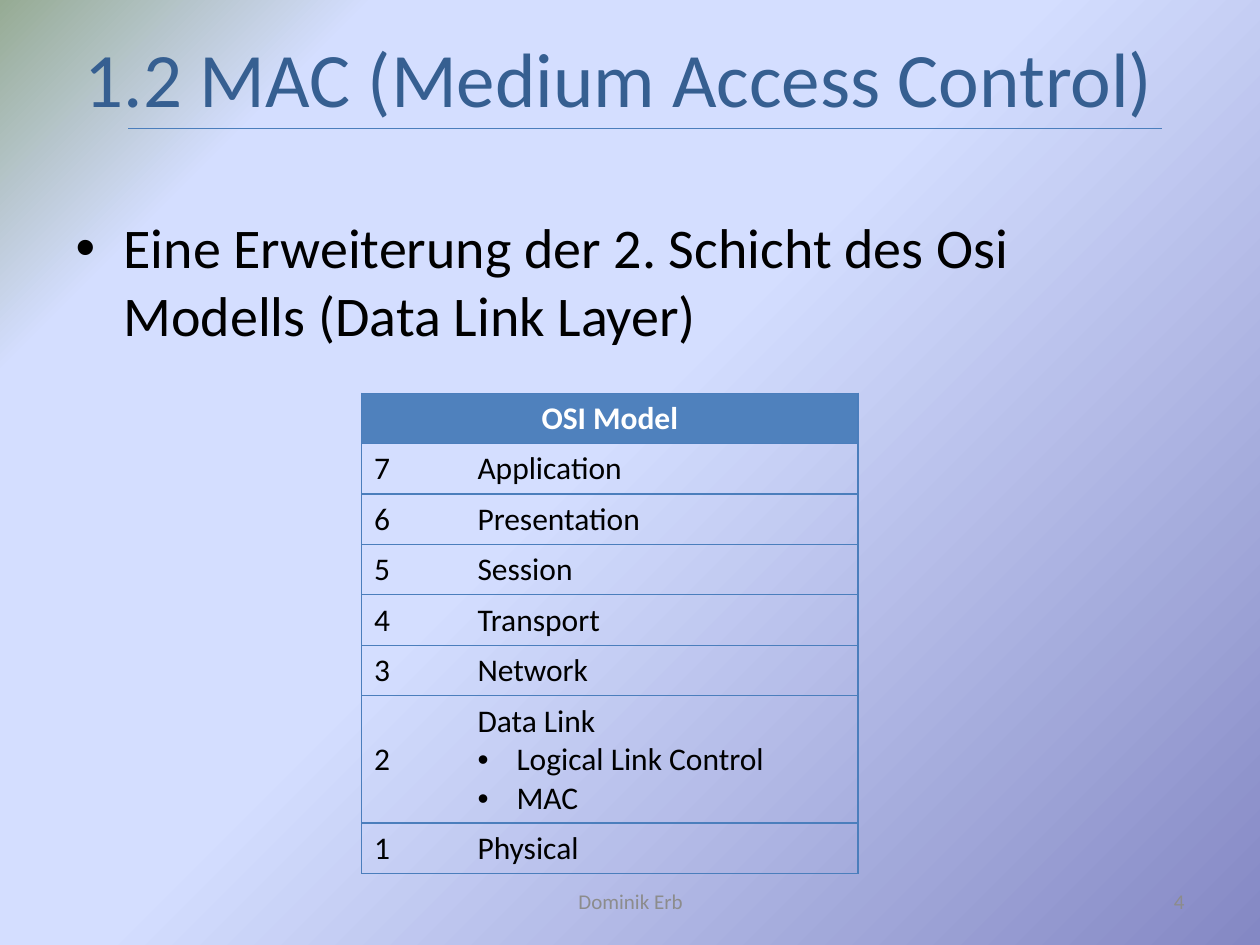
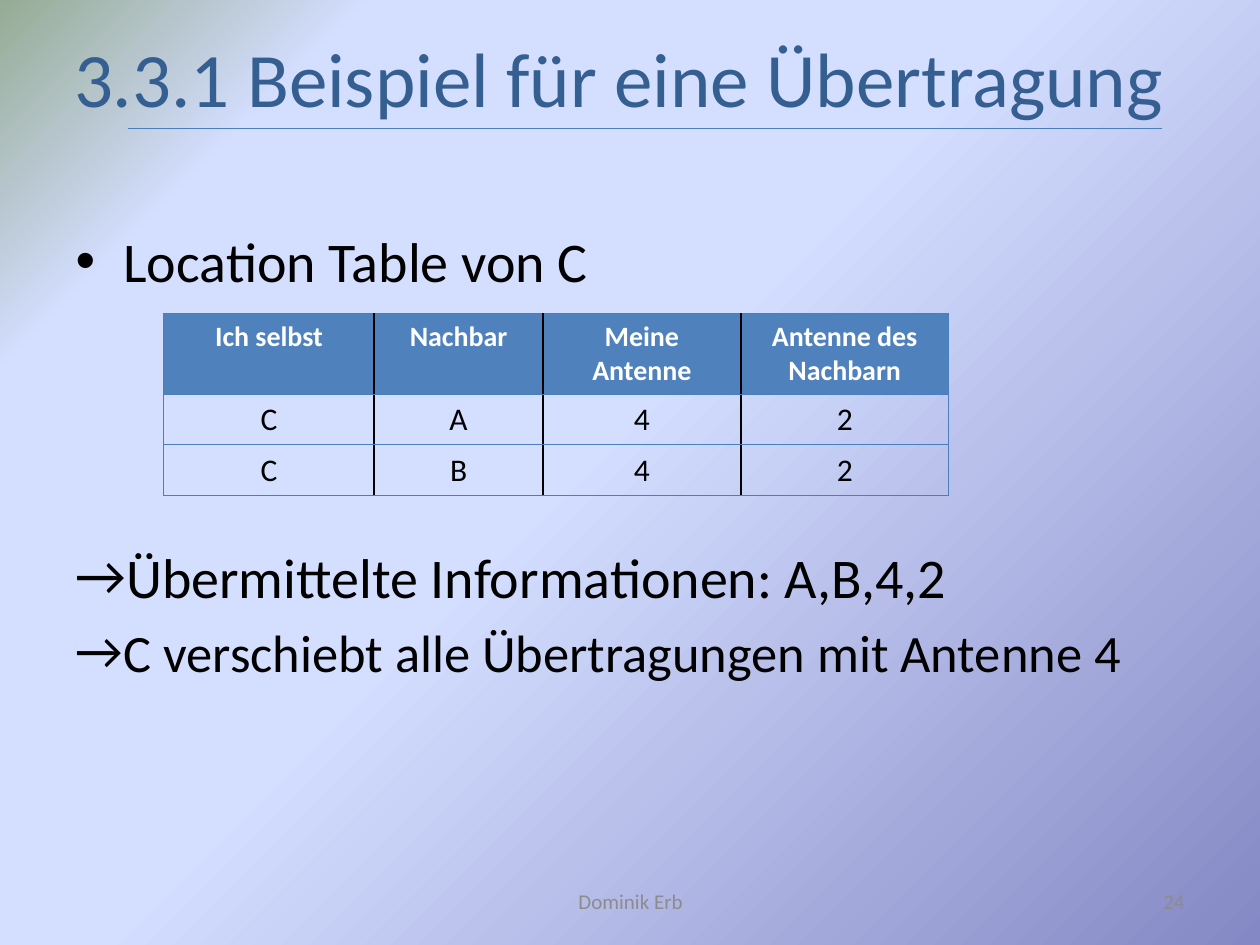
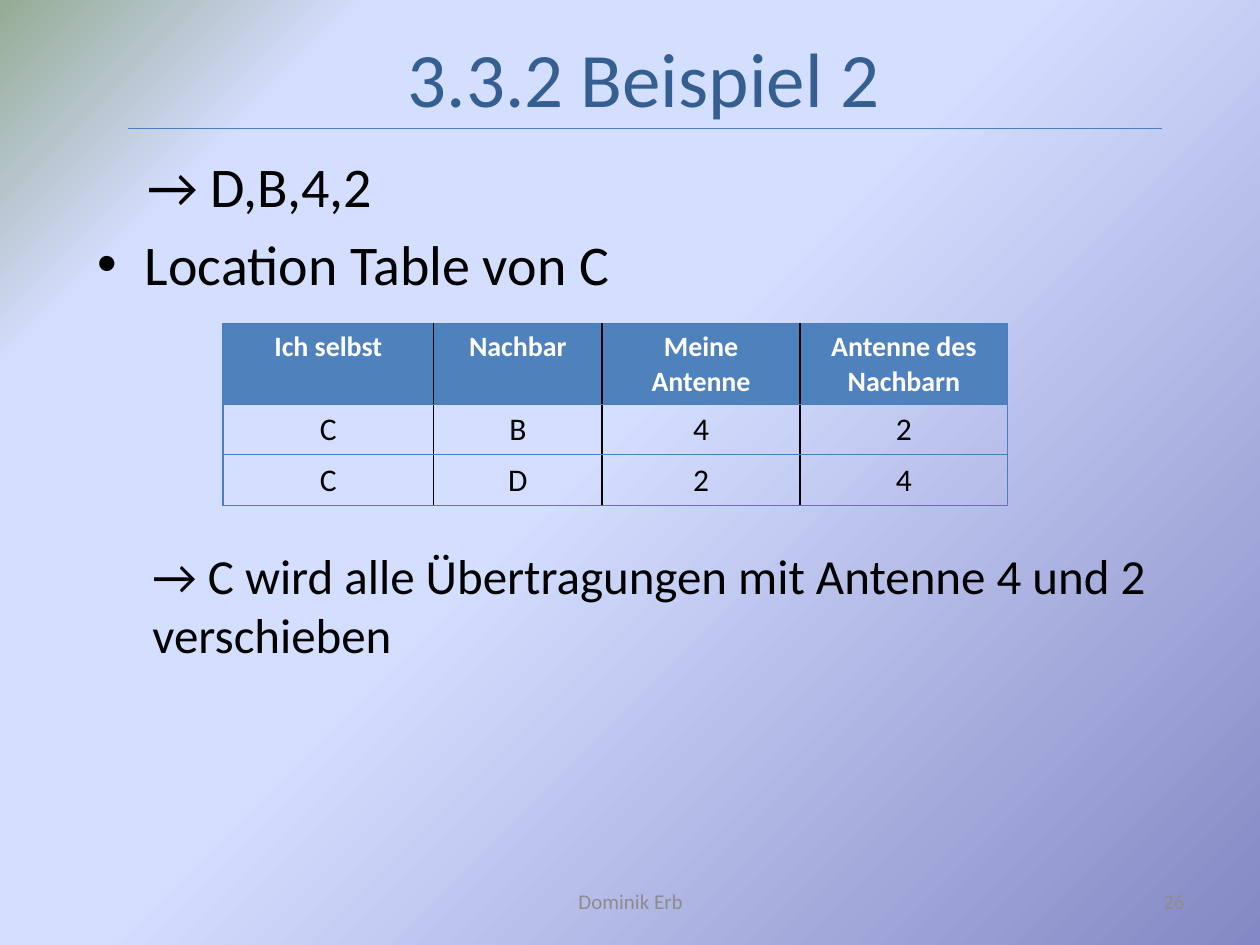
"""Build three slides on medium access control with OSI and location tables."""
import copy
import dataclasses

import pptx
import pptx.dml.color
import pptx.enum.dml
import pptx.enum.shapes
import pptx.enum.text
import pptx.oxml
import pptx.oxml.ns
import pptx.util
from lxml import etree

Inches = pptx.util.Inches
Pt = pptx.util.Pt
ALIGN = pptx.enum.text.PP_ALIGN
ANCHOR = pptx.enum.text.MSO_ANCHOR
qn = pptx.oxml.ns.qn


@dataclasses.dataclass(frozen=True)
class Theme:
    font: str = "Calibri"
    title: str = "365F91"
    text: str = "000000"
    footer: str = "8C8C8C"
    rule: str = "4B7EBC"
    header_fill: str = "4F81BD"
    header_text: str = "FFFFFF"
    backdrop: tuple = ((0, "96AB94"), (17, "D4DEFF"), (47, "D4DEFF"), (100, "8488C4"))
    title_size: float = 44
    body_size: float = 32
    table_size: float = 18
    footer_size: float = 12
    rule_width: float = 0.75
    divider_width: float = 1


def rgb(color):
    return pptx.dml.color.RGBColor.from_string(color)


def write(para, text, *, font, size, color, bold=False, align=None,
          bullet=None, left=0, hanging=0, before=0):
    span = para.add_run()
    span.text = text
    span.font.name = font
    span.font.size = Pt(size)
    span.font.bold = bold
    span.font.color.rgb = rgb(color)
    para.alignment = align
    para.space_before = Pt(before)
    properties = para._p.get_or_add_pPr()
    properties.set("marL", str(Inches(left)))
    properties.set("indent", str(-Inches(hanging)))
    if bullet:
        face = "Arial" if bullet == "•" else font
        etree.SubElement(properties, qn("a:buFont")).set("typeface", face)
        etree.SubElement(properties, qn("a:buChar")).set("char", bullet)
    else:
        etree.SubElement(properties, qn("a:buNone"))


class SlideBuilder:
    def __init__(self, deck, theme):
        self.deck = deck
        self.theme = theme
        self.slide = None
        self.paint_master()

    def paint_master(self):
        master = self.deck.slide_master
        fill = master.background.fill
        fill.gradient()
        fill.gradient_angle = 315
        stops = master.element.find(".//" + qn("p:bg")).find(".//" + qn("a:gsLst"))
        for stop in list(stops):
            stops.remove(stop)
        for position, color in self.theme.backdrop:
            stop = etree.SubElement(stops, qn("a:gs"), pos=str(position * 1000))
            etree.SubElement(stop, qn("a:srgbClr"), val=color)

    def place(self, shape, left, top, width, height):
        shape.left, shape.top = Inches(left), Inches(top)
        shape.width, shape.height = Inches(width), Inches(height)

    def start(self, title, number, left=0.47, width=8.89):
        self.slide = self.deck.slides.add_slide(self.deck.slide_layouts[1])
        box = self.slide.shapes.title
        self.place(box, left, -0.2, width, 1.61)
        box.text_frame.auto_size = pptx.enum.text.MSO_AUTO_SIZE.NONE
        box.text_frame.vertical_anchor = ANCHOR.MIDDLE
        write(box.text_frame.paragraphs[0], title, font=self.theme.font,
              size=self.theme.title_size, color=self.theme.title, align=ALIGN.CENTER)
        self.title_rule()
        self.footer("Dominik Erb", 3.42, 3.17, ALIGN.CENTER)
        self.footer(str(number), 7.17, 2.33, ALIGN.RIGHT)

    def title_rule(self):
        rule = self.slide.shapes.add_connector(
            pptx.enum.shapes.MSO_CONNECTOR.STRAIGHT,
            Inches(1.02), Inches(1.02), Inches(9.22), Inches(1.02))
        rule.line.color.rgb = rgb(self.theme.rule)
        rule.line.width = Pt(self.theme.rule_width)
        etree.SubElement(rule._element.spPr, qn("a:effectLst"))

    def footer(self, text, left, width, align):
        box = self.slide.shapes.add_textbox(
            Inches(left), Inches(6.95), Inches(width), Inches(0.4))
        box.text_frame.word_wrap = True
        box.text_frame.vertical_anchor = ANCHOR.MIDDLE
        write(box.text_frame.paragraphs[0], text, font=self.theme.font,
              size=self.theme.footer_size, color=self.theme.footer, align=align)

    def body(self, left, top, items):
        box = self.slide.placeholders[1]
        self.place(box, left, top, 9, 4.95)
        frame = box.text_frame
        frame.auto_size = pptx.enum.text.MSO_AUTO_SIZE.NONE
        for index, (text, options) in enumerate(items):
            para = frame.add_paragraph() if index else frame.paragraphs[0]
            style = dict(size=self.theme.body_size, bullet="•", left=0.38,
                         hanging=0.38, before=6.4)
            write(para, text, font=self.theme.font, color=self.theme.text,
                  **(style | options))

    def border(self, cell, side, color, width):
        properties = cell._tc.get_or_add_tcPr()
        line = etree.Element(qn("a:ln" + side), w=str(Pt(width)))
        if color:
            fill = etree.SubElement(line, qn("a:solidFill"))
            etree.SubElement(fill, qn("a:srgbClr"), val=color)
        else:
            etree.SubElement(line, qn("a:noFill"))
        properties.insert("LRTB".index(side), line)

    def style_cell(self, cell, header, first, last, divider):
        theme = self.theme
        outer = (theme.rule, theme.rule_width)
        inner = (divider, theme.divider_width)
        if header:
            cell.fill.solid()
            cell.fill.fore_color.rgb = rgb(theme.header_fill)
        else:
            cell.fill.background()
        for side, line in zip("LRTB", (outer if first else inner,
                                       outer if last else inner, outer, outer)):
            self.border(cell, side, *line)

    def table(self, left, top, widths, heights, rows, header_size,
              align=None, divider=None, merge_header=False):
        theme = self.theme
        grid = self.slide.shapes.add_table(
            len(rows), len(widths), Inches(left), Inches(top),
            Inches(sum(widths)), Inches(sum(heights))).table
        grid.first_row = grid.horz_banding = False
        style = grid._tbl.tblPr.find(qn("a:tableStyleId"))
        style.text = "{2D5ABB26-0587-4C30-8999-92F81FD0307C}"
        for column, width in zip(grid.columns, widths):
            column.width = Inches(width)
        for row, height in zip(grid.rows, heights):
            row.height = Inches(height)
        if merge_header:
            grid.cell(0, 0).merge(grid.cell(0, len(widths) - 1))
        for row, values in enumerate(rows):
            header = row == 0
            for column, value in enumerate(values):
                cell = grid.cell(row, column)
                end = column + (cell.span_width if cell.is_merge_origin else 1)
                self.style_cell(cell, header, column == 0, end == len(widths), divider)
                lines = value.split("\n")
                for index, text in enumerate(lines):
                    para = cell.text_frame.add_paragraph() if index else cell.text_frame.paragraphs[0]
                    listing = dict(bullet="•", left=0.31, hanging=0.31) if index else {}
                    write(para, text, font=theme.font, bold=header,
                          size=header_size if header else theme.table_size,
                          color=theme.header_text if header else theme.text,
                          align=ALIGN.CENTER if header else align, **listing)
        return grid

    def location_table(self, left, top, entries):
        header = ("Ich selbst", "Nachbar", "Meine Antenne", "Antenne des Nachbarn")
        self.table(left, top, (1.67, 1.34, 1.57, 1.65), (0.64, 0.4, 0.4),
                   [header, *entries], header_size=16, align=ALIGN.CENTER,
                   divider=self.theme.text)


def osi_slide(builder):
    builder.start("1.2 MAC (Medium Access Control)", 4)
    builder.body(0.5, 1.64, [
        ("Eine Erweiterung der 2. Schicht des Osi Modells (Data Link Layer)", {})])
    layers = ("Application", "Presentation", "Session", "Transport", "Network",
              "Data Link\nLogical Link Control\nMAC", "Physical")
    rows = [("OSI Model",)]
    rows += [(str(len(layers) - index), layer) for index, layer in enumerate(layers)]
    heights = [1.01 if "\n" in row[-1] else 0.4 for row in rows]
    grid = builder.table(2.87, 3.12, (0.82, 3.12), heights, rows,
                         header_size=builder.theme.table_size, merge_header=True)
    grid.cell(6, 0).vertical_anchor = ANCHOR.MIDDLE


def transfer_slide(builder):
    builder.start("3.3.1 Beispiel für eine Übertragung", 24)
    builder.body(0.5, 1.75, [
        ("Location Table von C", {}),
        ("Übermittelte Informationen: A,B,4,2", dict(bullet="→", before=142)),
        ("C verschiebt alle Übertragungen mit Antenne 4",
         dict(bullet="→", size=30, before=6))])
    builder.location_table(1.3, 2.49, [("C", "A", "4", "2"), ("C", "B", "4", "2")])


def second_example_slide(builder):
    builder.start("3.3.2 Beispiel 2", 26, left=0.86, width=8.5)
    builder.body(0.67, 1.15, [
        ("→ D,B,4,2", dict(bullet=None, left=0.4, hanging=0)),
        ("Location Table von C", {}),
        ("→ C wird alle Übertragungen mit Antenne 4 und 2 verschieben",
         dict(bullet=None, left=0.44, hanging=0, size=28, before=142))])
    builder.location_table(1.77, 2.57, [("C", "B", "4", "2"), ("C", "D", "2", "4")])


def main():
    deck = pptx.Presentation()
    deck.slide_width, deck.slide_height = Inches(10), Inches(7.5)
    builder = SlideBuilder(deck, Theme())
    osi_slide(builder)
    transfer_slide(builder)
    second_example_slide(builder)
    deck.save("out.pptx")


if __name__ == "__main__":
    main()
